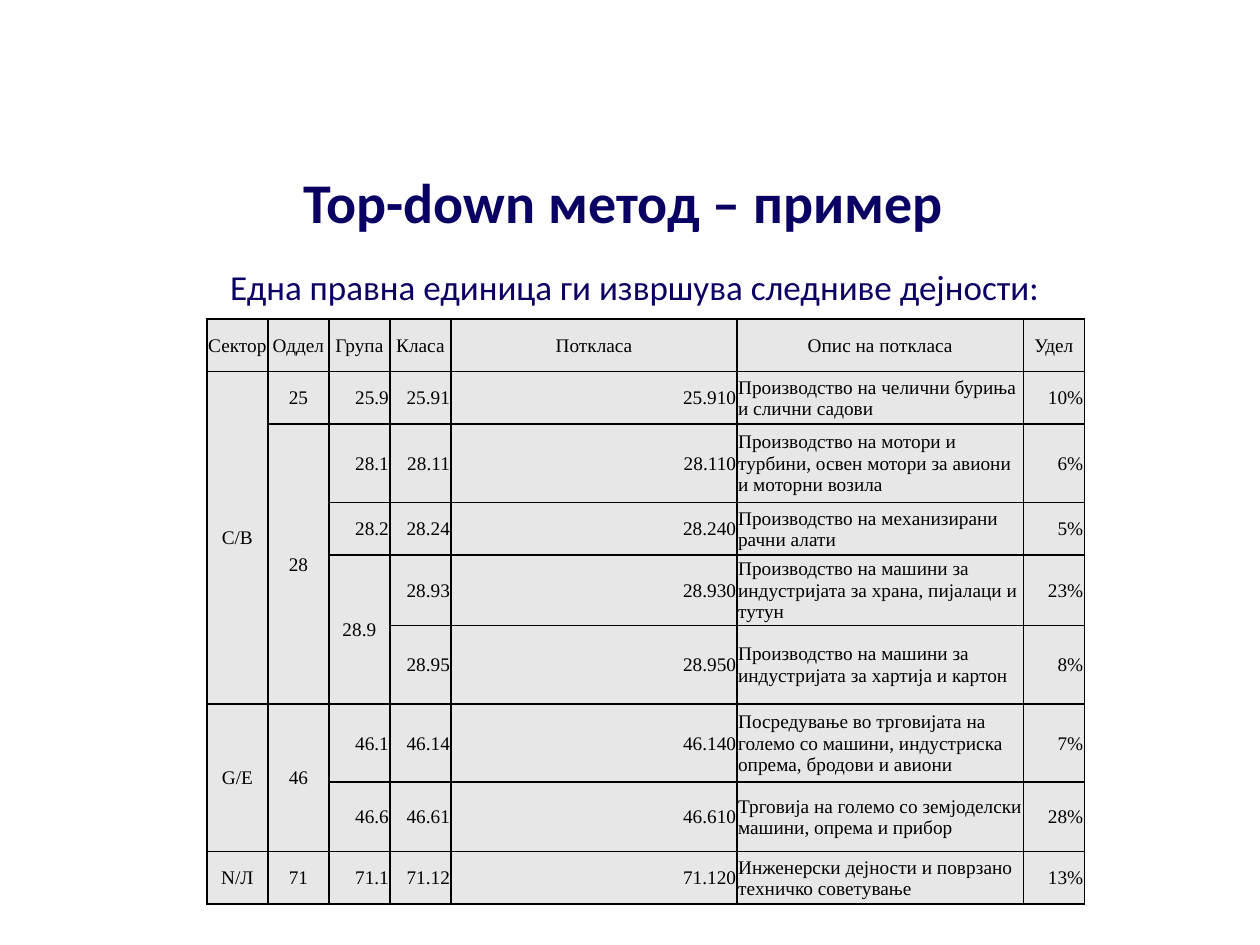
import pptx
import pptx.dml.color
import pptx.enum.text
import pptx.oxml.ns
import pptx.util
from lxml import etree

Cm = pptx.util.Cm
Pt = pptx.util.Pt
ALIGN = pptx.enum.text.PP_ALIGN
MIDDLE = pptx.enum.text.MSO_ANCHOR.MIDDLE

COLORS = {"navy": "0A0064", "black": "000000", "cell": "E7E7E7"}

COLUMN_WIDTHS = [1.23] * 4 + [5.77] * 2 + [1.23]
ROW_HEIGHTS = [1.06, 1.06, 1.58, 1.06, 1.4, 1.58, 1.58, 1.4, 1.06]
BODY_ALIGNMENTS = ([ALIGN.CENTER] * 2 + [ALIGN.RIGHT] * 3
                   + [ALIGN.LEFT, ALIGN.RIGHT])

# None continues the cell above
ACTIVITIES = [
    ["Сектор", "Оддел", "Група", "Класа", "Поткласа", "Опис на поткласа", "Удел"],
    ["C/В", "25", "25.9", "25.91", "25.910",
     "Производство на челични буриња и слични садови", "10%"],
    [None, "28", "28.1", "28.11", "28.110",
     "Производство на мотори и турбини, освен мотори за авиони и моторни возила", "6%"],
    [None, None, "28.2", "28.24", "28.240",
     "Производство на меxанизирани рачни алати", "5%"],
    [None, None, "28.9", "28.93", "28.930",
     "Производство на машини за индустријата за xрана, пијалаци и тутун", "23%"],
    [None, None, None, "28.95", "28.950",
     "Производство на машини за индустријата за xартија и картон", "8%"],
    ["G/Е", "46", "46.1", "46.14", "46.140",
     "Посредување во трговијата на големо со машини, индустриска опрема, "
     "бродови и авиони", "7%"],
    [None, None, "46.6", "46.61", "46.610",
     "Трговија на големо со земјоделски машини, опрема и прибор", "28%"],
    ["N/Л", "71", "71.1", "71.12", "71.120",
     "Инженерски дејности и поврзано теxничко советување", "13%"],
]


def rgb(name):
    return pptx.dml.color.RGBColor.from_string(COLORS[name])


def write(frame, text, size, font, color, align, bold=False):
    paragraph = frame.paragraphs[0]
    paragraph.text = text
    paragraph.alignment = align
    paragraph.font.size = Pt(size)
    paragraph.font.name = font
    paragraph.font.bold = bold
    paragraph.font.color.rgb = rgb(color)


def add_title(slide, text):
    title = slide.shapes.title
    title.left, title.top = Cm(0.58), Cm(2.8)
    title.width, title.height = Cm(23.98), Cm(2.5)
    title.text_frame.vertical_anchor = MIDDLE
    write(title.text_frame, text, 32, "Calibri", "navy", ALIGN.CENTER, bold=True)


def add_intro(slide, text):
    intro = slide.shapes.add_textbox(Cm(4.39), Cm(5.23), Cm(16.85), Cm(1.11))
    intro.text_frame.word_wrap = True
    write(intro.text_frame, text, 20, "Calibri", "navy", ALIGN.LEFT)


def add_borders(cell):
    properties = cell._tc.get_or_add_tcPr()
    qn = pptx.oxml.ns.qn
    for side in ("a:lnL", "a:lnR", "a:lnT", "a:lnB"):
        line = etree.SubElement(properties, qn(side), w=str(Pt(1)))
        fill = etree.SubElement(line, qn("a:solidFill"))
        etree.SubElement(fill, qn("a:srgbClr"), val=COLORS["black"])


def format_cell(cell):
    add_borders(cell)
    cell.fill.solid()
    cell.fill.fore_color.rgb = rgb("cell")
    cell.vertical_anchor = MIDDLE
    cell.margin_left = cell.margin_right = cell.margin_top = Cm(0.02)
    cell.margin_bottom = 0


def count_span(row, column):
    """Count the rows that the cell covers."""
    end = row + 1
    while end < len(ACTIVITIES) and ACTIVITIES[end][column] is None:
        end += 1
    return end - row


def add_activity_table(slide):
    frame = slide.shapes.add_table(
        len(ROW_HEIGHTS), len(COLUMN_WIDTHS), Cm(4.17), Cm(6.43),
        Cm(sum(COLUMN_WIDTHS)), Cm(sum(ROW_HEIGHTS)))
    table = frame.table
    table.first_row = table.horz_banding = False
    for column, width in zip(table.columns, COLUMN_WIDTHS):
        column.width = Cm(width)
    for row, height in zip(table.rows, ROW_HEIGHTS):
        row.height = Cm(height)

    for r, values in enumerate(ACTIVITIES):
        for c, value in enumerate(values):
            cell = table.cell(r, c)
            format_cell(cell)
            if value is None:
                continue
            span = count_span(r, c)
            if span > 1:
                cell.merge(table.cell(r + span - 1, c))
            centered = r == 0 or span > 1
            align = ALIGN.CENTER if centered else BODY_ALIGNMENTS[c]
            write(cell.text_frame, value, 11, "Times New Roman", "black", align)


def main():
    deck = pptx.Presentation()
    deck.slide_width, deck.slide_height = Cm(25.4), Cm(19.05)
    slide = deck.slides.add_slide(deck.slide_layouts[5])

    add_title(slide, "Top-down метод – пример")
    add_intro(slide, "Една правна единица ги извршува следниве дејности:")
    add_activity_table(slide)

    deck.save("out.pptx")


if __name__ == "__main__":
    main()
